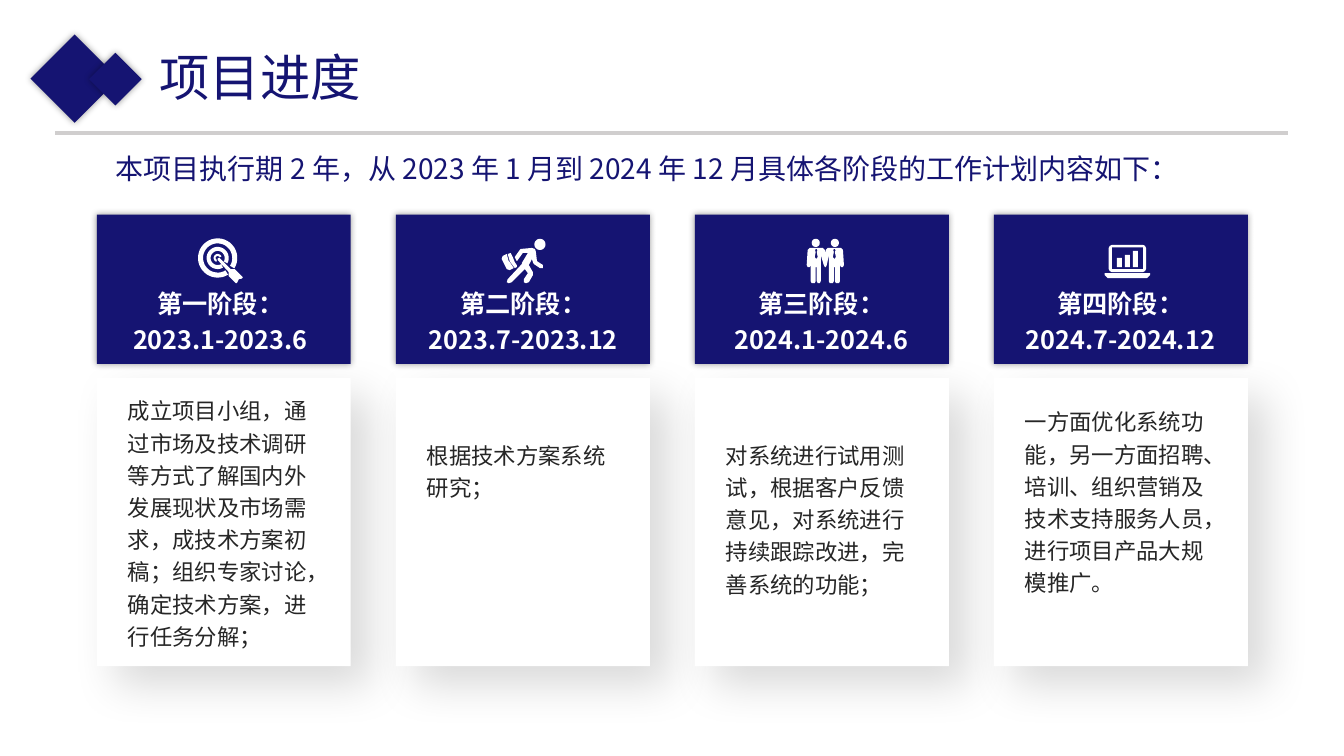
from dataclasses import dataclass
from math import cos, radians, sin

from lxml import etree
from pptx import Presentation
from pptx.dml.color import RGBColor
from pptx.enum.shapes import MSO_CONNECTOR, MSO_SHAPE
from pptx.enum.text import MSO_ANCHOR, MSO_AUTO_SIZE, PP_ALIGN
from pptx.oxml.ns import qn
from pptx.util import Emu, Pt

RECTANGLE = MSO_SHAPE.RECTANGLE
STRAIGHT = MSO_CONNECTOR.STRAIGHT
LEFT, CENTER = PP_ALIGN.LEFT, PP_ALIGN.CENTER
TOP = MSO_ANCHOR.TOP
FIXED_SIZE = MSO_AUTO_SIZE.NONE

# The slide is a grid of square cells; every Box is given in cells.
COLUMNS, ROWS = 40, 22.5
CELL = 304800
ICON_POINT = 9144  # 100 icon points to 3 cells
FINENESS = 10

Point = tuple[float, float]
Outline = list[Point]


@dataclass(frozen=True)
class Theme:
    navy: str = "151472"
    white: str = "FFFFFF"
    ink: str = "262626"
    rule: str = "D0CECE"
    title_font: str = "Noto Sans CJK JP"
    text_font: str = "Noto Sans CJK SC"
    title_size: int = 36
    intro_size: int = 20
    caption_size: int = 18
    plan_size: int = 16


@dataclass(frozen=True)
class Box:
    left: float
    top: float
    width: float
    height: float


@dataclass(frozen=True)
class Shadow:
    alpha: int
    blur: float
    distance: float = 0
    angle: int = 0


@dataclass(frozen=True)
class Stage:
    name: str
    period: str
    plan: str
    plan_top: float
    plan_height: float
    caption_shift: float
    icon_shift: float
    icon: list[Outline]


@dataclass(frozen=True)
class CardGrid:
    left: float = 2.88
    right: float = 37.14
    width: float = 7.56

    def column(self, index: int, count: int) -> float:
        return self.left + index * (self.right - self.left - self.width) / (count - 1)


THEME = Theme()
CARDS = CardGrid()
GLOW = Shadow(alpha=40, blur=5)
DROP = Shadow(alpha=14, blur=32, distance=19, angle=45)


def arc(x: float, y: float, radius: float, start: int = 0, sweep: int = 360) -> Outline:
    angles = [radians(start + sweep * step / 36) for step in range(37)]
    return [(x + radius * cos(a), y + radius * sin(a)) for a in angles]


def open_ring(x: float, y: float, outer: float, inner: float, start: int, sweep: int) -> Outline:
    return arc(x, y, outer, start, sweep) + arc(x, y, inner, start, sweep)[::-1]


def bar(left: float, top: float, right: float, bottom: float) -> Outline:
    return [(left, top), (right, top), (right, bottom), (left, bottom)]


def necktie(x: float) -> Outline:
    return [(x - .5, 10), (x + .5, 10), (x + 1.2, 11.5), (x + .5, 13), (x + 1.5, 18),
            (x, 20), (x - 1.5, 18), (x - .5, 13), (x - 1.2, 11.5)]


TARGET = [
    open_ring(20, 19, 19.5, 14.5, 58, 334),
    open_ring(20, 19, 11, 7, 61, 328),
    open_ring(20, 19, 4, 2, 110, 230),
    [(21, 19), (22, 19), (33, 30), (37, 30), (45, 38), (44, 39.5), (41, 40),
     (39, 44), (38, 44), (31, 37), (31, 33), (20, 21), (20, 19.5)],
]
RUNNER = [
    arc(38, 5.5, 5.5),
    [(13, 18), (18, 11), (19, 10), (30, 9), (33, 10), (34, 13), (35, 22), (41, 26),
     (41, 29), (38, 29), (32, 25), (31, 23), (30, 20), (27, 26), (31, 33), (31, 36),
     (27, 43), (24, 44), (22, 43), (22, 40), (26, 34), (23, 30), (10, 43), (7, 44),
     (5, 43), (6, 40), (20, 25), (20, 24), (26, 14), (21, 14), (16, 21), (15, 22)],
    [(1, 17), (5, 15), (7, 22), (8, 23), (12, 29), (8, 31), (5, 30), (0, 20)],
    [(6, 15), (9, 14), (11, 18), (13, 23), (15, 26), (15, 28), (13, 29), (8, 22)],
]
PARTNERS = [
    arc(9, 4, 4),
    arc(28, 4, 4),
    [(3, 9), (16, 9), (18, 11), (18, 15), (19, 11), (21, 9), (34, 9), (36, 11), (37, 26),
     (36, 28), (34, 28), (33, 26), (33, 42), (32, 44), (29, 44), (28, 42), (28, 28),
     (27, 28), (27, 42), (26, 44), (23, 44), (22, 42), (22, 16), (20, 26), (19, 28),
     (18, 28), (17, 26), (14, 16), (14, 42), (13, 44), (11, 44), (10, 42), (10, 28),
     (9, 28), (9, 42), (8, 44), (5, 44), (4, 42), (4, 26), (3, 28), (1, 28), (0, 26),
     (1, 11)],
    necktie(9.5),
    necktie(27.5),
]
LAPTOP = [
    [(0, 34), (45, 34), (45, 36), (42, 39), (3, 39), (0, 36)],
    [(4, 9), (5, 7), (7, 6), (38, 6), (40, 7), (41, 9), (41, 30), (40, 32), (38, 33),
     (7, 33), (5, 32), (4, 30)],
    bar(7, 8.5, 38, 30),
    *[bar(12 + 8 * step, top, 17 + 8 * step, 28) for step, top in enumerate((19, 16, 12))],
]

STAGES = [
    Stage("第一阶段：", "2023.1-2023.6",
          "成立项目小组，通过市场及技术调研等方式了解国内外发展现状及市场需求，"
          "成技术方案初稿；组织专家讨论，确定技术方案，进行任务分解；",
          11.52, 8.04, 0, 3, TARGET),
    Stage("第二阶段：", "2023.7-2023.12", "根据技术方案系统研究；",
          12.84, 2.25, 0.12, 3.15, RUNNER),
    Stage("第三阶段：", "2024.1-2024.6",
          "对系统进行试用测试，根据客户反馈意见，对系统进行持续跟踪改进，完善系统的功能；",
          12.84, 5.13, 0.09, 3.33, PARTNERS),
    Stage("第四阶段：", "2024.7-2024.12",
          "一方面优化系统功能，另一方面招聘、培训、组织营销及技术支持服务人员，"
          "进行项目产品大规模推广。",
          11.85, 6.12, 0.09, 3.3, LAPTOP),
]


def cells(count: float) -> Emu:
    return Emu(round(count * CELL))


def frame(box: Box) -> tuple[Emu, Emu, Emu, Emu]:
    return cells(box.left), cells(box.top), cells(box.width), cells(box.height)


def paint(shape, color: str) -> None:
    shape.shadow.inherit = False
    shape.fill.solid()
    shape.fill.fore_color.rgb = RGBColor.from_string(color)
    shape.line.fill.background()


def add_panel(slide, box: Box, color: str, shadow: Shadow, rotation: float = 0) -> None:
    panel = slide.shapes.add_shape(RECTANGLE, *frame(box))
    paint(panel, color)
    panel.rotation = rotation
    effects = panel.element.spPr.find(qn("a:effectLst"))
    outer = etree.SubElement(effects, qn("a:outerShdw"), blurRad=str(Pt(shadow.blur)),
                             dist=str(Pt(shadow.distance)), dir=str(shadow.angle * 60000),
                             algn="ctr", rotWithShape="0")
    black = etree.SubElement(outer, qn("a:srgbClr"), val="000000")
    etree.SubElement(black, qn("a:alpha"), val=str(shadow.alpha * 1000))


def write(holder, text: str, size: int, color: str, font: str = THEME.text_font,
          bold: bool = False, align: PP_ALIGN = LEFT, spacing: float = 1.0) -> None:
    body = holder.text_frame
    body.word_wrap = True
    body.auto_size = FIXED_SIZE
    body.vertical_anchor = TOP
    body.text = text
    for paragraph in body.paragraphs:
        paragraph.alignment = align
        paragraph.line_spacing = spacing
        for run in paragraph.runs:
            run.font.size = Pt(size)
            run.font.bold = bold
            run.font.color.rgb = RGBColor.from_string(color)
            run.font.name = font
            etree.SubElement(run.font._element, qn("a:ea"), typeface=font)


def add_icon(slide, left: float, top: float, outlines: list[Outline]) -> None:
    fine = [[(round(x * FINENESS), round(y * FINENESS)) for x, y in outline]
            for outline in outlines]
    builder = slide.shapes.build_freeform(*fine[0][0], scale=ICON_POINT / FINENESS)
    builder.add_line_segments(fine[0][1:], close=True)
    for start, *rest in fine[1:]:
        builder.move_to(*start)
        builder.add_line_segments(rest, close=True)
    paint(builder.convert_to_shape(cells(left), cells(top)), THEME.white)


def add_heading(slide) -> None:
    rule = slide.shapes.add_connector(STRAIGHT, cells(1.65), cells(3.96),
                                      cells(38.34), cells(3.96))
    rule.line.color.rgb = RGBColor.from_string(THEME.rule)
    rule.line.width = Pt(2.25)
    etree.SubElement(rule.element.spPr, qn("a:effectLst"))
    for diamond in (Box(1.29, 1.41, 1.86, 1.86), Box(2.88, 1.8, 1.11, 1.11)):
        add_panel(slide, diamond, THEME.navy, GLOW, rotation=315)
    title = slide.shapes.title
    title.left, title.top, title.width, title.height = frame(Box(4.44, 1.23, 18.63, 2.13))
    write(title, "项目进度", THEME.title_size, THEME.navy, THEME.title_font)
    intro = slide.shapes.add_textbox(*frame(Box(1.65, 4.35, 35.1, 1.29)))
    write(intro, "本项目执行期 2 年，从 2023 年 1 月到 2024 年 12 月具体各阶段的工作计划内容如下：",
          THEME.intro_size, THEME.navy)
    intro.text_frame.paragraphs[0]._p.get_or_add_pPr().set("indent", str(cells(1.5)))


def add_stage(slide, stage: Stage, left: float) -> None:
    add_panel(slide, Box(left, 11.25, CARDS.width, 8.58), THEME.white, DROP)
    plan = slide.shapes.add_textbox(
        *frame(Box(left + 0.63, stage.plan_top, 6.27, stage.plan_height)))
    write(plan, stage.plan, THEME.plan_size, THEME.ink, spacing=1.2)
    add_panel(slide, Box(left, 6.39, CARDS.width, 4.44), THEME.navy, GLOW)
    add_icon(slide, left + stage.icon_shift, 7.11, stage.icon)
    caption = slide.shapes.add_textbox(*frame(Box(left + stage.caption_shift, 8.25, 7.35, 2.49)))
    write(caption, f"{stage.name}\n{stage.period}", THEME.caption_size, THEME.white,
          bold=True, align=CENTER, spacing=1.2)


def main() -> None:
    deck = Presentation()
    deck.slide_width, deck.slide_height = cells(COLUMNS), cells(ROWS)
    slide = deck.slides.add_slide(deck.slide_layouts[5])
    add_heading(slide)
    for index, stage in enumerate(STAGES):
        add_stage(slide, stage, CARDS.column(index, len(STAGES)))
    deck.save("out.pptx")


if __name__ == "__main__":
    main()
